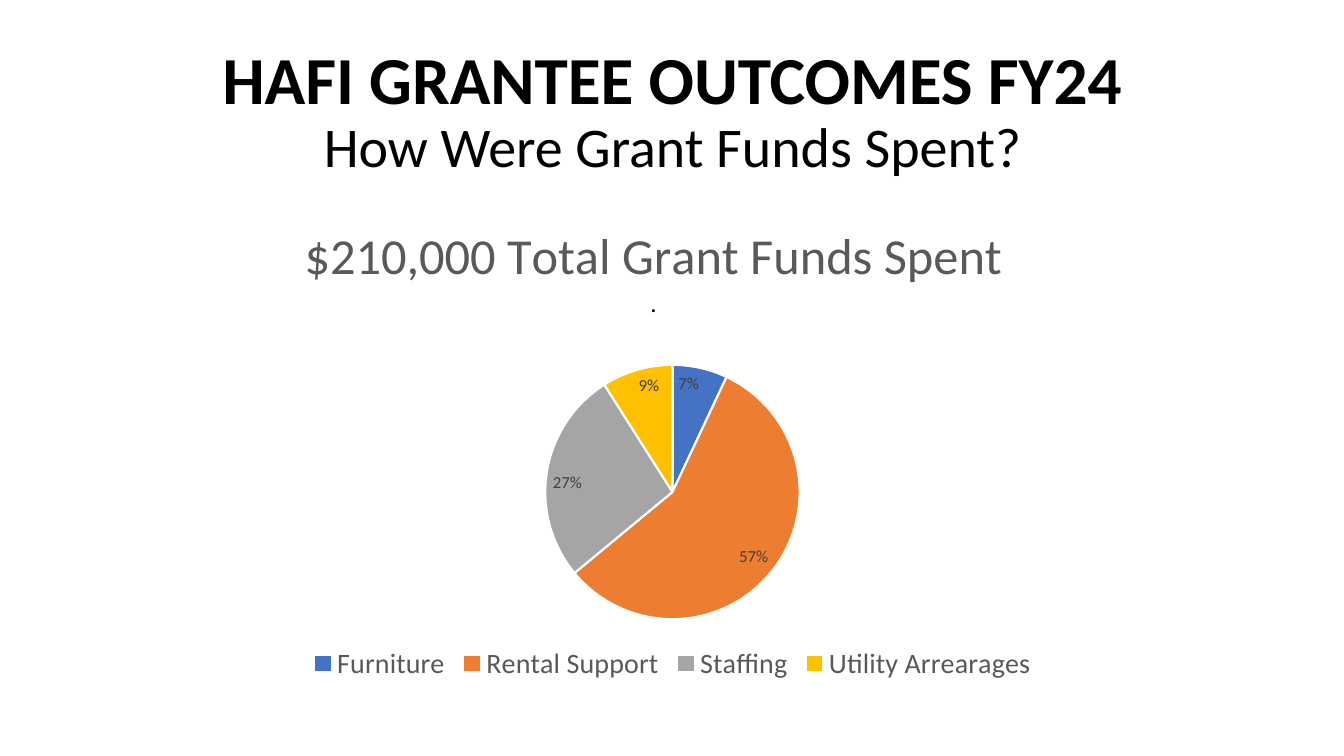
from lxml import etree
from pptx import Presentation
from pptx.chart.data import CategoryChartData
from pptx.dml.color import RGBColor
from pptx.enum import chart as ch, text
from pptx.util import Inches, Pt

FONT = "Calibri"
SPENDING = [
    ("Furniture", 0.07, "4472C4"),
    ("Rental Support", 0.57, "ED7D31"),
    ("Staffing", 0.27, "A5A5A5"),
    ("Utility Arrearages", 0.09, "FFC000"),
]


def rgb(value):
    return RGBColor.from_string(value)


def style(font, size, color, bold=False):
    font.name, font.size, font.bold = FONT, Pt(size), bold
    font.color.rgb = rgb(color)


def set_layout(element, **fractions):
    """Place a chart part by fractions of the chart's own box."""
    namespace = element.nsmap["c"]
    for old in element.findall(f"{{{namespace}}}layout"):
        element.remove(old)
    layout = etree.Element(f"{{{namespace}}}layout")
    manual = etree.SubElement(layout, f"{{{namespace}}}manualLayout")
    if "w" in fractions:
        etree.SubElement(manual, f"{{{namespace}}}layoutTarget", val="inner")
    for side in "xy":
        etree.SubElement(manual, f"{{{namespace}}}{side}Mode", val="edge")
    for key, value in fractions.items():
        etree.SubElement(manual, f"{{{namespace}}}{key}", val=str(value))
    rich_text = element.find(f"{{{namespace}}}tx")
    element.insert(0 if rich_text is None else 1, layout)


def add_heading(slide, left, top, width, height):
    heading = slide.shapes.title
    heading.left, heading.top = Inches(left), Inches(top)
    heading.width, heading.height = Inches(width), Inches(height)
    heading.text_frame.vertical_anchor = text.MSO_ANCHOR.MIDDLE
    lines = heading.text_frame.paragraphs[0]
    lines.text = "HAFI GRANTEE OUTCOMES FY24\vHow Were Grant Funds Spent?"
    lines.alignment = text.PP_ALIGN.CENTER
    lines.line_spacing = 0.9
    outcomes, question = lines.runs
    style(outcomes.font, 48, "000000", bold=True)
    style(question.font, 40, "000000")


def add_spending_chart(slide, left, top, width, height):
    names, shares, colors = zip(*SPENDING)
    data = CategoryChartData(number_format="0%")
    data.categories = names
    data.add_series("Series 1", shares)
    chart = slide.shapes.add_chart(
        ch.XL_CHART_TYPE.PIE, Inches(left), Inches(top),
        Inches(width), Inches(height), data).chart
    style(chart.font, 10, "000000")

    total = chart.chart_title.text_frame
    total.text = "$210,000 Total Grant Funds Spent\n."
    for paragraph, size, color in zip(total.paragraphs, (36, 18), ("595959", "000000")):
        paragraph.alignment = text.PP_ALIGN.CENTER
        style(paragraph.runs[0].font, size, color)
    chart.chart_title.include_in_layout = False
    set_layout(chart.element.chart.find("c:title", chart.element.nsmap), x=0.18, y=0.03)

    chart.has_legend = True
    chart.legend.position = ch.XL_LEGEND_POSITION.BOTTOM
    chart.legend.include_in_layout = False
    style(chart.legend.font, 20, "595959")

    pie = chart.plots[0]
    pie.vary_by_categories = True
    set_layout(chart.element.chart.plotArea, x=0.39, y=0.33, w=0.22, h=0.53)
    for index, color in enumerate(colors):
        wedge = pie.series[0].points[index].format
        wedge.fill.solid()
        wedge.fill.fore_color.rgb = rgb(color)
        wedge.line.color.rgb = rgb("FFFFFF")
        wedge.line.width = Pt(1.5)

    labels = pie.series[0].data_labels
    labels.show_value = True
    labels.number_format, labels.number_format_is_linked = "0%", False
    labels.position = ch.XL_LABEL_POSITION.INSIDE_END
    style(labels.font, 12, "404040")


def main():
    deck = Presentation()
    deck.slide_width, deck.slide_height = Inches(13.33), Inches(7.5)
    slide = deck.slides.add_slide(deck.slide_layouts[5])
    add_heading(slide, 0.92, 0.4, 11.5, 1.45)
    add_spending_chart(slide, 0.92, 2.05, 11.5, 4.76)
    deck.save("out.pptx")


if __name__ == "__main__":
    main()
